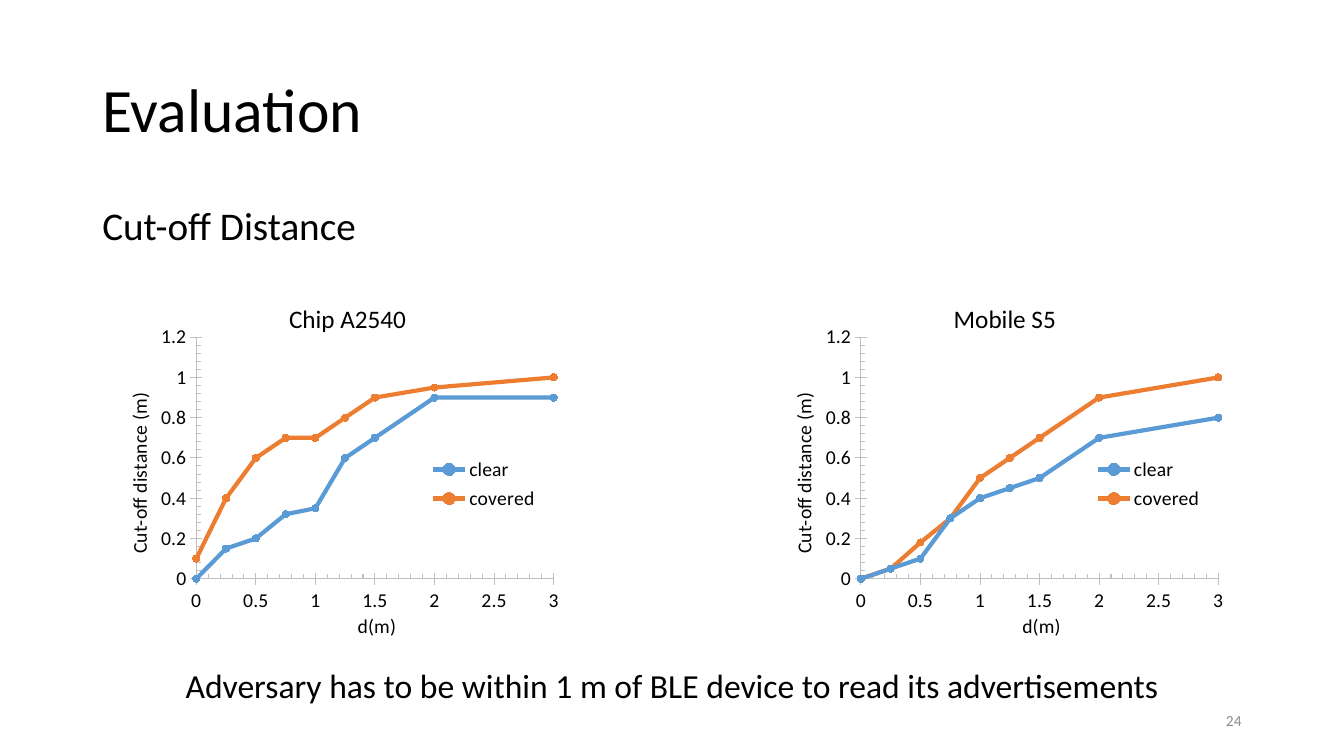
from dataclasses import dataclass

from pptx import Presentation
from pptx import util as u
from pptx.chart.data import XyChartData
from pptx.dml.color import RGBColor
from pptx.enum import chart as charts, text
from pptx.oxml import parse_xml
from pptx.oxml.ns import nsdecls, qn

EMU_PER_PX = 9525


def px(length):
    return u.Emu(length * EMU_PER_PX)


@dataclass(frozen=True)
class Theme:
    font: str = "Calibri"
    ink: str = "000000"
    muted: str = "8C8C8C"
    axis: str = "BFBFBF"
    clear: str = "5B9BD5"
    covered: str = "ED7D31"
    title: int = 44
    heading: int = 28
    message: int = 24
    chart_title: int = 18
    chart_text: int = 14
    page_number: int = 11


def format_font(font, theme, size, color=None):
    font.name = theme.font
    font.size = u.Pt(size)
    font.bold = False
    font.color.rgb = RGBColor.from_string(color or theme.ink)


def write(frame, content, theme, size, color=None, align=text.PP_ALIGN.LEFT,
          line_spacing=1.0, space_before=0):
    para = frame.paragraphs[0]
    para.alignment = align
    para.line_spacing = line_spacing
    para.space_before = u.Pt(space_before)
    span = para.add_run()
    span.text = content
    format_font(span.font, theme, size, color)


def place_part(part, **fractions):
    """Set the manual layout of a chart part, in fractions of the chart."""
    old = part.find(qn("c:layout"))
    if old is not None:
        part.remove(old)
    inner = '<c:layoutTarget val="inner"/>' if part.tag == qn("c:plotArea") else ""
    modes = "".join(f'<c:{key}Mode val="edge"/>' for key in "xy")
    values = "".join(f'<c:{key} val="{value}"/>' for key, value in fractions.items())
    layout = parse_xml(f'<c:layout {nsdecls("c")}><c:manualLayout>{inner}{modes}{values}'
                       '</c:manualLayout></c:layout>')
    before = [child for child in part if child.tag in (qn("c:tx"), qn("c:legendPos"))]
    part.insert(len(before), layout)


class SlideBuilder:
    def __init__(self, deck, theme):
        self.theme = theme
        self.page = deck.slides.add_slide(deck.slide_layouts[6])

    def label(self, content, left, top, width, height, size,
              anchor=text.MSO_ANCHOR.TOP, **style):
        box = self.page.shapes.add_textbox(px(left), px(top), px(width), px(height))
        box.text_frame.word_wrap = True
        box.text_frame.vertical_anchor = anchor
        write(box.text_frame, content, self.theme, size, **style)

    def distance_chart(self, title, left, top, width, height, distances, series):
        data = XyChartData()
        for name, cutoffs in series.items():
            points = data.add_series(name)
            for distance, cutoff in zip(distances, cutoffs):
                points.add_data_point(distance, cutoff)
        chart = self.page.shapes.add_chart(
            charts.XL_CHART_TYPE.XY_SCATTER_SMOOTH,
            px(left), px(top), px(width), px(height), data).chart
        format_font(chart.font, self.theme, self.theme.chart_text)

        chart.has_title = True
        write(chart.chart_title.text_frame, title, self.theme,
              self.theme.chart_title, align=text.PP_ALIGN.CENTER)
        self.axis(chart.category_axis, "d(m)", 3, 0.5)
        self.axis(chart.value_axis, "Cut-off distance (m)", 1.2, 0.2)
        turned = chart.value_axis.axis_title.text_frame._txBody.bodyPr
        turned.set("rot", "-5400000")
        turned.set("vert", "horz")

        for line in chart.plots[0].series:
            self.line_style(line, RGBColor.from_string(getattr(self.theme, line.name)))
        chart.plots[0].vary_by_categories = False
        self.legend(chart)

        root = chart._chartSpace.chart
        place_part(root.plotArea, x=0.19, y=0.17, w=0.77, h=0.65)
        place_part(root.find(qn("c:title")), x=0.38, y=0.06)
        place_part(chart.category_axis._element.find(qn("c:title")), x=0.53, y=0.9)
        place_part(chart.value_axis._element.find(qn("c:title")), x=0.03, y=0.31)
        place_part(root.find(qn("c:legend")), x=0.68, y=0.48, w=0.26, h=0.17)

    def axis(self, axis, title, maximum, step):
        axis.has_major_gridlines = axis.has_minor_gridlines = False
        axis.minimum_scale, axis.maximum_scale = 0, maximum
        axis.major_unit, axis.minor_unit = step, step / 5
        axis.major_tick_mark = charts.XL_TICK_MARK.CROSS
        axis.minor_tick_mark = charts.XL_TICK_MARK.INSIDE
        axis.tick_labels.number_format = "General"
        axis.tick_labels.number_format_is_linked = False
        format_font(axis.tick_labels.font, self.theme, self.theme.chart_text)
        axis.format.line.color.rgb = RGBColor.from_string(self.theme.axis)
        axis.format.line.width = u.Pt(0.75)
        write(axis.axis_title.text_frame, title, self.theme,
              self.theme.chart_text, align=text.PP_ALIGN.CENTER)

    def line_style(self, line, color):
        line.smooth = True
        line.format.line.color.rgb = color
        line.format.line.width = u.Pt(3)
        line.marker.style = charts.XL_MARKER_STYLE.CIRCLE
        line.marker.size = 5
        line.marker.format.fill.solid()
        line.marker.format.fill.fore_color.rgb = color
        line.marker.format.line.color.rgb = color

    def legend(self, chart):
        chart.has_legend = True
        chart.legend.position = charts.XL_LEGEND_POSITION.RIGHT
        chart.legend.include_in_layout = True
        format_font(chart.legend.font, self.theme, self.theme.chart_text)


DISTANCES = [0, 0.25, 0.5, 0.75, 1, 1.25, 1.5, 2, 3]
DEVICES = {
    "Chip A2540": {
        "clear": [0, 0.15, 0.2, 0.32, 0.35, 0.6, 0.7, 0.9, 0.9],
        "covered": [0.1, 0.4, 0.6, 0.7, 0.7, 0.8, 0.9, 0.95, 1],
    },
    "Mobile S5": {
        "clear": [0, 0.05, 0.1, 0.3, 0.4, 0.45, 0.5, 0.7, 0.8],
        "covered": [0, 0.05, 0.18, 0.3, 0.5, 0.6, 0.7, 0.9, 1],
    },
}


def main():
    deck = Presentation()
    deck.slide_width, deck.slide_height = px(1280), px(720)
    theme = Theme()
    slide = SlideBuilder(deck, theme)

    slide.label("Evaluation", 88, 38, 1104, 139, theme.title,
                anchor=text.MSO_ANCHOR.MIDDLE, line_spacing=0.9)
    slide.label("Cut-off Distance", 88, 192, 1104, 457, theme.heading,
                line_spacing=0.9, space_before=10)
    slide.label("24", 904, 667, 288, 38, theme.page_number, color=theme.muted,
                anchor=text.MSO_ANCHOR.MIDDLE, align=text.PP_ALIGN.RIGHT)
    for column, (device, series) in enumerate(DEVICES.items()):
        slide.distance_chart(device, 103 + 633 * column, 261, 442, 354,
                             DISTANCES, series)
    slide.label("Adversary has to be within 1 m of BLE device to read its advertisements",
                159, 629, 962, 48, theme.message, align=text.PP_ALIGN.CENTER)
    deck.save("out.pptx")


if __name__ == "__main__":
    main()
